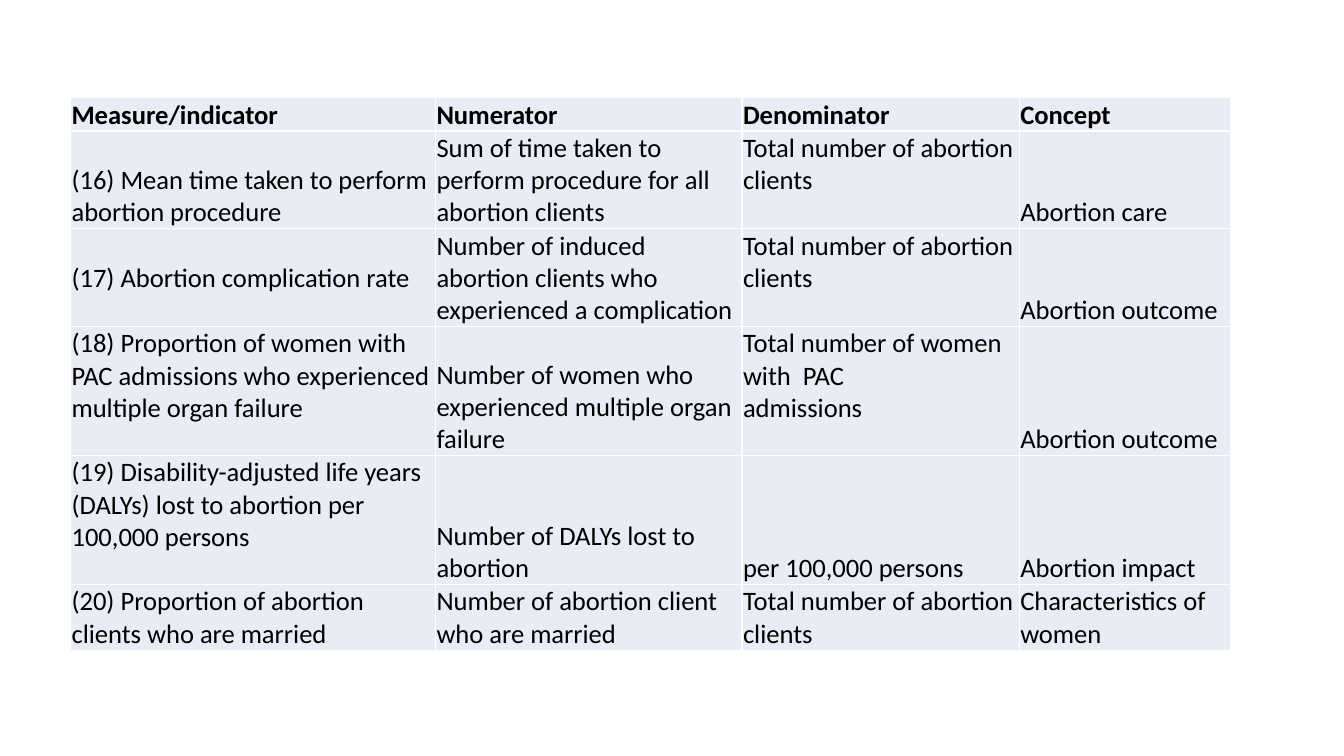
import pptx
import pptx.dml.color
import pptx.enum.text
import pptx.oxml
import pptx.oxml.ns
import pptx.util

SLIDE_WIDTH, SLIDE_HEIGHT = 13.33, 7.5
COLUMN_WIDTHS = [3.62, 3.04, 2.75, 2.1]
LINE_HEIGHT = 0.32
LINES_PER_ROW = [1, 3, 3, 4, 4, 2]
CLIENTS = "Total number of abortion\nclients"
INDICATORS = [
    ["Measure/indicator", "Numerator", "Denominator", "Concept"],
    ["(16) Mean time taken to perform abortion procedure",
     "Sum of time taken to perform procedure for all abortion clients",
     CLIENTS, "Abortion care"],
    ["(17) Abortion complication rate",
     "Number of induced abortion clients who experienced a complication",
     CLIENTS, "Abortion outcome"],
    ["(18) Proportion of women with PAC admissions who experienced multiple organ failure",
     "Number of women who experienced multiple organ failure",
     "Total number of women with  PAC\nadmissions", "Abortion outcome"],
    ["(19) Disability-adjusted life years (DALYs) lost to abortion per 100,000 persons",
     "Number of DALYs lost to abortion", "per 100,000 persons", "Abortion impact"],
    ["(20) Proportion of abortion clients who are married",
     "Number of abortion client who are married",
     CLIENTS, "Characteristics of women"],
]
ANCHOR = pptx.enum.text.MSO_ANCHOR
# Cells (row, column) whose text does not stand on the bottom edge
ANCHORS = {(1, 2): ANCHOR.TOP, (2, 0): ANCHOR.MIDDLE, (2, 2): ANCHOR.TOP,
           (3, 0): ANCHOR.TOP, (3, 2): ANCHOR.TOP, (4, 0): ANCHOR.TOP}


def color(hex_string):
    return pptx.dml.color.RGBColor.from_string(hex_string)


def add_borders(cell, hex_string, points):
    """Line all four sides; borders must precede the fill in the cell's XML."""
    properties = cell._tc.get_or_add_tcPr()
    for index, side in enumerate(("lnL", "lnR", "lnT", "lnB")):
        properties.insert(index, pptx.oxml.parse_xml(
            f'<a:{side} {pptx.oxml.ns.nsdecls("a")} w="{pptx.util.Pt(points)}">'
            f'<a:solidFill><a:srgbClr val="{hex_string}"/></a:solidFill></a:{side}>'))


def fill_cell(cell, text, bold, anchor):
    cell.fill.solid()
    cell.fill.fore_color.rgb = color("E9EBF5")
    add_borders(cell, "FFFFFF", 1)
    cell.margin_left = cell.margin_right = cell.margin_top = pptx.util.Inches(0.01)
    cell.margin_bottom = 0
    cell.vertical_anchor = anchor
    frame = cell.text_frame
    for index, line in enumerate(text.split("\n")):
        paragraph = frame.add_paragraph() if index else frame.paragraphs[0]
        run = paragraph.add_run()
        run.text = line
        run.font.name = "Calibri"
        run.font.size = pptx.util.Pt(19)
        run.font.bold = bold
        run.font.color.rgb = color("000000")


def add_indicator_table(slide, left, top):
    height = LINE_HEIGHT * sum(LINES_PER_ROW)
    box = [pptx.util.Inches(length) for length in (left, top, sum(COLUMN_WIDTHS), height)]
    table = slide.shapes.add_table(len(INDICATORS), len(COLUMN_WIDTHS), *box).table
    for column, width in zip(table.columns, COLUMN_WIDTHS):
        column.width = pptx.util.Inches(width)
    for row, lines in zip(table.rows, LINES_PER_ROW):
        row.height = pptx.util.Inches(lines * LINE_HEIGHT)
    for row_index, texts in enumerate(INDICATORS):
        for column_index, text in enumerate(texts):
            anchor = ANCHORS.get((row_index, column_index), ANCHOR.BOTTOM)
            fill_cell(table.cell(row_index, column_index), text, row_index == 0, anchor)


def main():
    presentation = pptx.Presentation()
    presentation.slide_width = pptx.util.Inches(SLIDE_WIDTH)
    presentation.slide_height = pptx.util.Inches(SLIDE_HEIGHT)
    slide = presentation.slides.add_slide(presentation.slide_layouts[6])
    add_indicator_table(slide, left=0.7, top=0.97)
    presentation.save("out.pptx")


if __name__ == "__main__":
    main()
